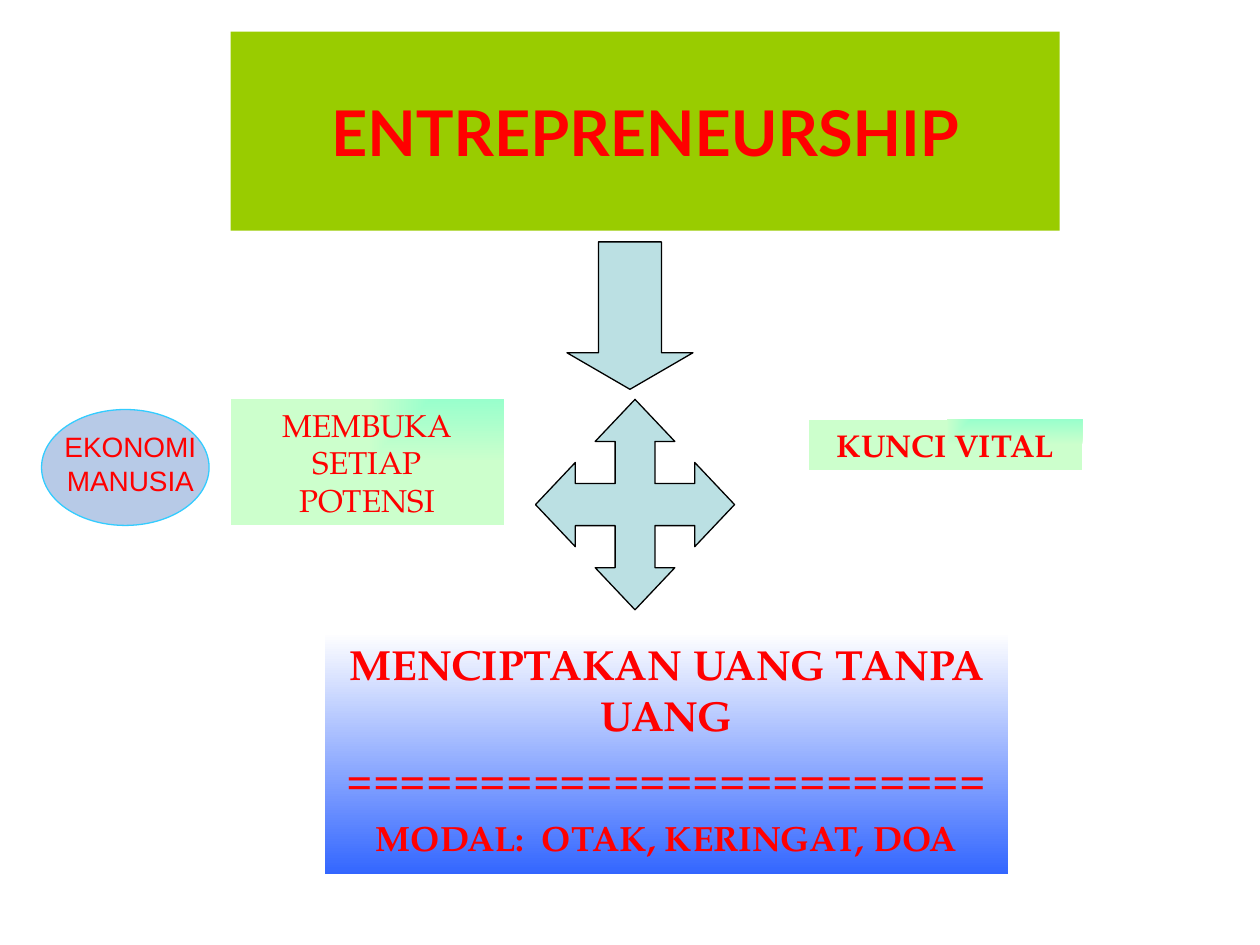
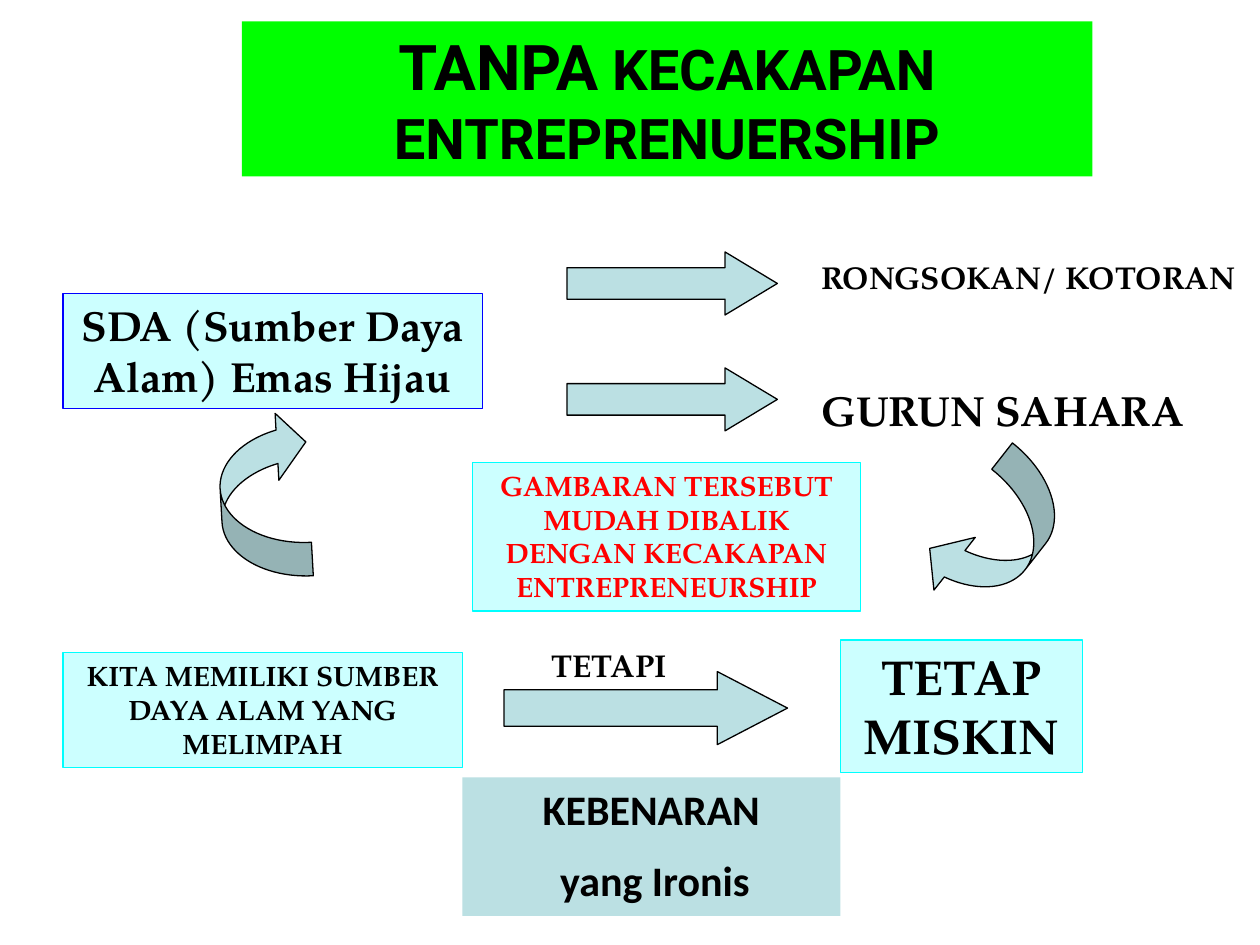
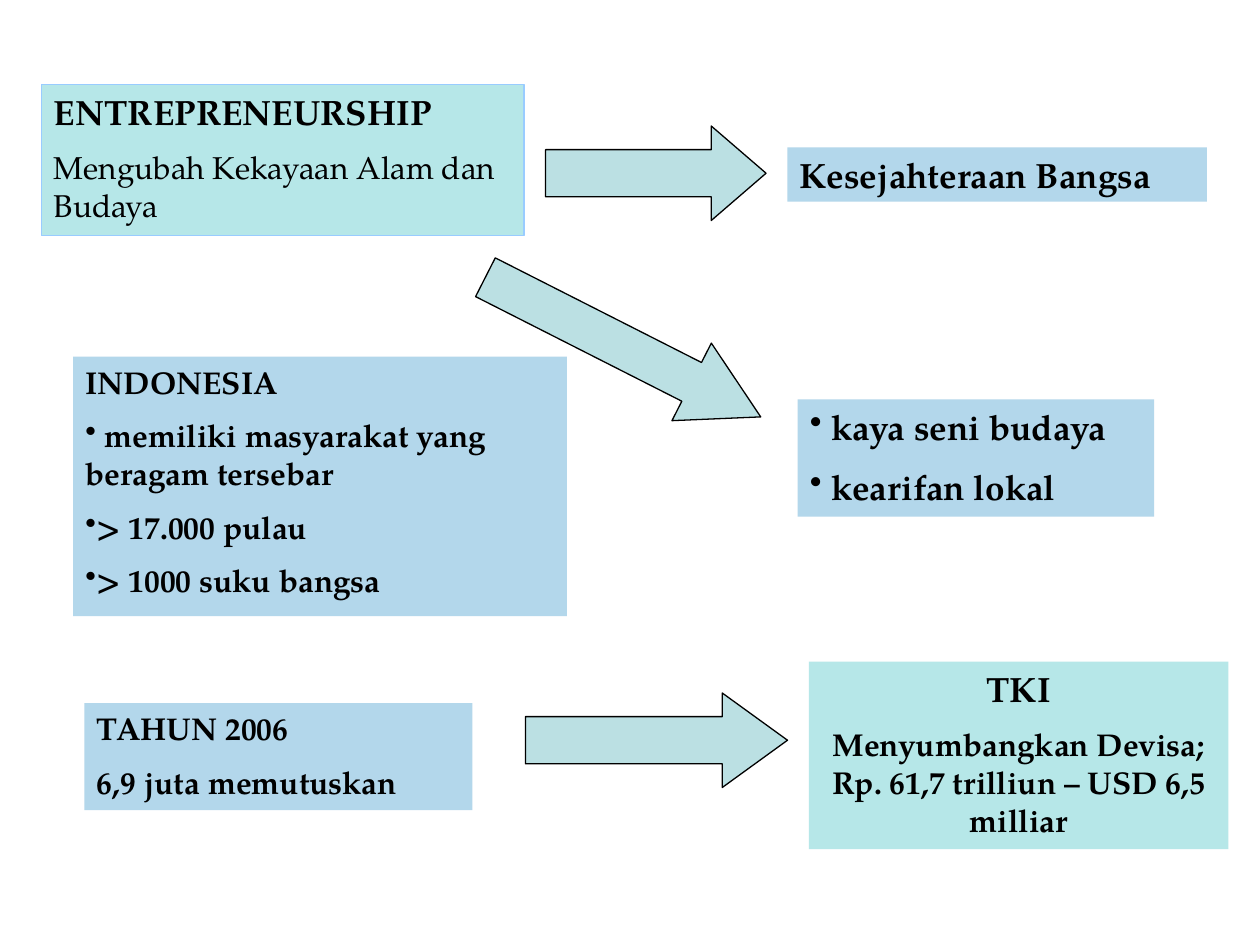
from lxml import etree
from pptx import Presentation
from pptx.dml.color import RGBColor
from pptx.enum.shapes import MSO_SHAPE as SHP
from pptx.enum.text import MSO_ANCHOR as ANC, MSO_AUTO_SIZE as FIT, PP_ALIGN as AL
from pptx.oxml import parse_xml
from pptx.oxml.ns import nsdecls, qn
from pptx.util import Inches, Pt

C = {
    "black": "000000", "red": "FF0000", "white": "FFFFFF",
    "olive": "99CC00", "lime": "00FF00", "arrow": "BBE0E3",
    "mint": "99FFCC", "pale": "CCFFCC", "royal": "3366FF",
    "ice": "CCFFFF", "cyan": "00FFFF", "blue": "0000FF",
    "oval": "B7CAE7", "oval_line": "33CCFF",
    "aqua": "B6E7E8", "aqua_line": "99CCFF", "sky": "B3D7EB",
}
SERIF = "TeX Gyre Pagella"
CORNER = ('<a:path path="rect"><a:fillToRect l="100000" t="0" r="0" b="100000"/></a:path>')
DOWNWARD = '<a:lin ang="5400000" scaled="1"/>'


def rgb(name):
    return RGBColor.from_string(C[name])


def inches(*values):
    return [Inches(v) for v in values]


def paint(sp, fill=None, line=None):
    """Solid fill and thin outline, each optional."""
    sp.shadow.inherit = False
    if fill:
        sp.fill.solid()
        sp.fill.fore_color.rgb = rgb(fill)
    if line:
        sp.line.color.rgb = rgb(line)
        sp.line.width = Pt(0.75)
    else:
        sp.line.fill.background()


def paint_gradient(sp, start, end, direction):
    stops = "".join(f'<a:gs pos="{pos}"><a:srgbClr val="{C[name]}"/></a:gs>'
                    for pos, name in ((0, start), (100000, end)))
    grad = parse_xml(f'<a:gradFill {nsdecls("a")} rotWithShape="1">'
                     f'<a:gsLst>{stops}</a:gsLst>{direction}</a:gradFill>')
    sp.fill.background()
    none = sp._element.spPr.find(qn("a:noFill"))
    sp._element.spPr.replace(none, grad)


def write(tf, paras, font=SERIF, color="black", align=AL.CENTER,
          bullets_from=None, spaced=True):
    """Each paragraph is a list of runs: (text, size) or (text, size, bold)."""
    for i, runs in enumerate(paras):
        p = tf.paragraphs[0] if i == 0 else tf.add_paragraph()
        p.alignment = align
        p.space_before = Pt(runs[-1][1] / 2 if spaced else 0)
        if bullets_from is not None and i >= bullets_from:
            etree.SubElement(p._p.get_or_add_pPr(), qn("a:buChar")).set("char", "•")
        for text, size, *bold in runs:
            r = p.add_run()
            r.text = text
            r.font.name, r.font.size = font, Pt(size)
            r.font.bold = bold[0] if bold else True
            r.font.color.rgb = rgb(color)


def add_title(s, at, runs, font, color, fill, anchor):
    sp = s.shapes.title
    sp.left, sp.top, sp.width, sp.height = inches(*at)
    paint(sp, fill)
    tf = sp.text_frame
    tf.word_wrap, tf.auto_size, tf.vertical_anchor = True, FIT.NONE, anchor
    write(tf, [runs], font, color, spaced=False)


def add_box(s, at, paras, fill=None, line=None, **style):
    sp = s.shapes.add_shape(SHP.RECTANGLE, *inches(*at))
    paint(sp, fill, line)
    tf = sp.text_frame
    tf.word_wrap, tf.auto_size, tf.vertical_anchor = True, FIT.SHAPE_TO_FIT_TEXT, ANC.TOP
    write(tf, paras, **style)
    return sp


def add_label(shapes, at, paras, wrap=True, **style):
    tf = shapes.add_textbox(*inches(*at)).text_frame
    tf.word_wrap, tf.auto_size = wrap, FIT.SHAPE_TO_FIT_TEXT
    write(tf, paras, **style)


def add_arrow(s, at, adjust, kind=SHP.RIGHT_ARROW, turn=0):
    sp = s.shapes.add_shape(kind, *inches(*at))
    for i, value in enumerate(adjust):
        sp.adjustments[i] = value
    sp.rotation = turn
    paint(sp, "arrow", "black")


def add_four_way_arrow(s, left, top, width, height):
    """One arm on a grid of tenths, turned four times about the centre."""
    arm = [(0, -5), (-2, -3), (-1, -3), (-1, -1), (-3, -1), (-3, -2)]
    points = []
    for _ in range(4):
        points += arm
        arm = [(y, -x) for x, y in arm]
    points = [inches(left + width * (x + 5) / 10, top + height * (y + 5) / 10)
              for x, y in points]
    fb = s.shapes.build_freeform(*points[0])
    fb.add_line_segments(points[1:], close=True)
    paint(fb.convert_to_shape(), "arrow", "black")


def entrepreneurship_slide(s):
    add_title(s, (1.83, 0.25, 6.58, 1.58), [("ENTREPRENEURSHIP", 36)],
              "Lato", "red", "olive", ANC.MIDDLE)
    # Boxes around the four-way arrow
    for at, run in (((1.83, 3.17, 2.17, 1), ("MEMBUKA SETIAP POTENSI", 18, False)),
                    ((6.42, 3.33, 2.17, 0.4), ("KUNCI VITAL", 18))):
        paint_gradient(add_box(s, at, [[run]], color="red"), "mint", "pale", CORNER)
    money = add_box(s, (2.58, 5.02, 5.42, 1.92),
                    [[("MENCIPTAKAN UANG TANPA UANG", 24)], [("=" * 24, 20)],
                     [("MODAL:  OTAK, KERINGAT, DOA", 20)]], color="red")
    paint_gradient(money, "white", "royal", DOWNWARD)
    # Arrows
    add_arrow(s, (4.5, 1.92, 1, 1.17), (0.5, 0.29), SHP.DOWN_ARROW)
    add_four_way_arrow(s, 4.25, 3.17, 1.58, 1.67)
    # Human economy oval
    grp = s.shapes.add_group_shape()
    paint(grp.shapes.add_shape(SHP.OVAL, *inches(0.33, 3.25, 1.33, 0.92)),
          "oval", "oval_line")
    add_label(grp.shapes, (0.41, 3.36, 1.25, 0.64),
              [[("EKONOMI", 16, False)], [("MANUSIA", 16, False)]],
              wrap=False, font="Arial", color="red", spaced=False)


def without_skill_slide(s):
    add_title(s, (1.92, 0.17, 6.75, 1.23),
              [("TANPA", 36), (" KECAKAPAN ENTREPRENUERSHIP", 32)],
              "Roboto", "black", "lime", ANC.TOP)
    # Natural wealth and what becomes of it
    add_box(s, (0.5, 2.33, 3.33, 0.91), [[("SDA (Sumber Daya Alam) Emas Hijau", 24)]],
            "ice", "blue")
    for top in (2, 2.92):
        add_arrow(s, (4.5, top, 1.67, 0.5), (0.5, 0.83))
    add_label(s.shapes, (6.42, 2, 3.58, 0.9), [[("RONGSOKAN/ KOTORAN", 18)]], align=AL.LEFT)
    add_label(s.shapes, (6.42, 3, 3.33, 0.5), [[("GURUN SAHARA", 24)]], align=AL.LEFT)
    # Reversal, and rich resources against poverty
    add_box(s, (3.75, 3.67, 3.08, 1.18),
            [[("GAMBARAN TERSEBUT MUDAH DIBALIK DENGAN KECAKAPAN ENTREPRENEURSHIP", 16)]],
            "ice", "cyan", color="red")
    add_box(s, (0.5, 5.18, 3.17, 0.91),
            [[("KITA MEMILIKI SUMBER DAYA ALAM YANG MELIMPAH", 16)]], "ice", "cyan")
    add_arrow(s, (4, 5.33, 2.25, 0.58), (0.5, 0.96))
    add_label(s.shapes, (4.25, 5.08, 1.17, 0.4), [[("TETAPI", 18)]])
    add_box(s, (6.67, 5.08, 1.92, 1.05), [[("TETAP MISKIN", 28)]], "ice", "cyan")
    add_box(s, (3.67, 6.17, 3, 1.1),
            [[("KEBENARAN", 24)], [(" ", 18), ("yang Ironis", 24)]],
            "arrow", font="Calibri")
    # Curved arrows
    for left, top, turn in ((1.75, 3.26, 176.8), (7.55, 3.59, 38.1)):
        add_arrow(s, (left, top, 0.7, 1.33), (0.38, 0.76, 0.33),
                  SHP.CURVED_LEFT_ARROW, turn)


def prosperity_slide(s):
    # Entrepreneurship and its results
    add_box(s, (0.33, 0.67, 3.83, 1.2),
            [[("ENTREPRENEURSHIP", 20)], [("Mengubah Kekayaan Alam dan Budaya", 18, False)]],
            "aqua", "aqua_line", align=AL.LEFT)
    add_box(s, (6.25, 1.17, 3.33, 0.43), [[("Kesejahteraan Bangsa", 20)]],
            "sky", align=AL.LEFT)
    add_box(s, (6.33, 3.17, 2.83, 0.93),
            [[(" kaya seni budaya", 20)], [(" kearifan lokal", 20)]],
            "sky", align=AL.LEFT, bullets_from=0)
    # Indonesia and its workers abroad
    facts = ("INDONESIA", " memiliki masyarakat yang beragam tersebar",
             "> 17.000 pulau", "> 1000 suku bangsa")
    add_box(s, (0.58, 2.83, 3.92, 2.06), [[(fact, 18)] for fact in facts],
            "sky", align=AL.LEFT, bullets_from=1)
    add_box(s, (0.67, 5.58, 3.08, 0.85),
            [[("TAHUN 2006", 18)], [("6,9 juta memutuskan", 18)]], "sky", align=AL.LEFT)
    add_box(s, (6.42, 5.25, 3.33, 1.49),
            [[("TKI", 20)],
             [("Menyumbangkan Devisa; Rp. 61,7 trilliun – USD 6,5 milliar", 18)]], "aqua")
    # Arrows
    add_arrow(s, (4.33, 1, 1.75, 0.75), (0.5, 0.58))
    add_arrow(s, (3.72, 2.41, 2.45, 0.69), (0.5, 0.89), turn=26.9)
    add_arrow(s, (4.17, 5.5, 2.08, 0.75), (0.5, 0.69))


def main():
    prs = Presentation()
    prs.slide_width, prs.slide_height = inches(10, 7.5)
    title_only, blank = prs.slide_layouts[5], prs.slide_layouts[6]
    for layout, build in ((title_only, entrepreneurship_slide),
                          (title_only, without_skill_slide),
                          (blank, prosperity_slide)):
        build(prs.slides.add_slide(layout))
    prs.save("out.pptx")


if __name__ == "__main__":
    main()
